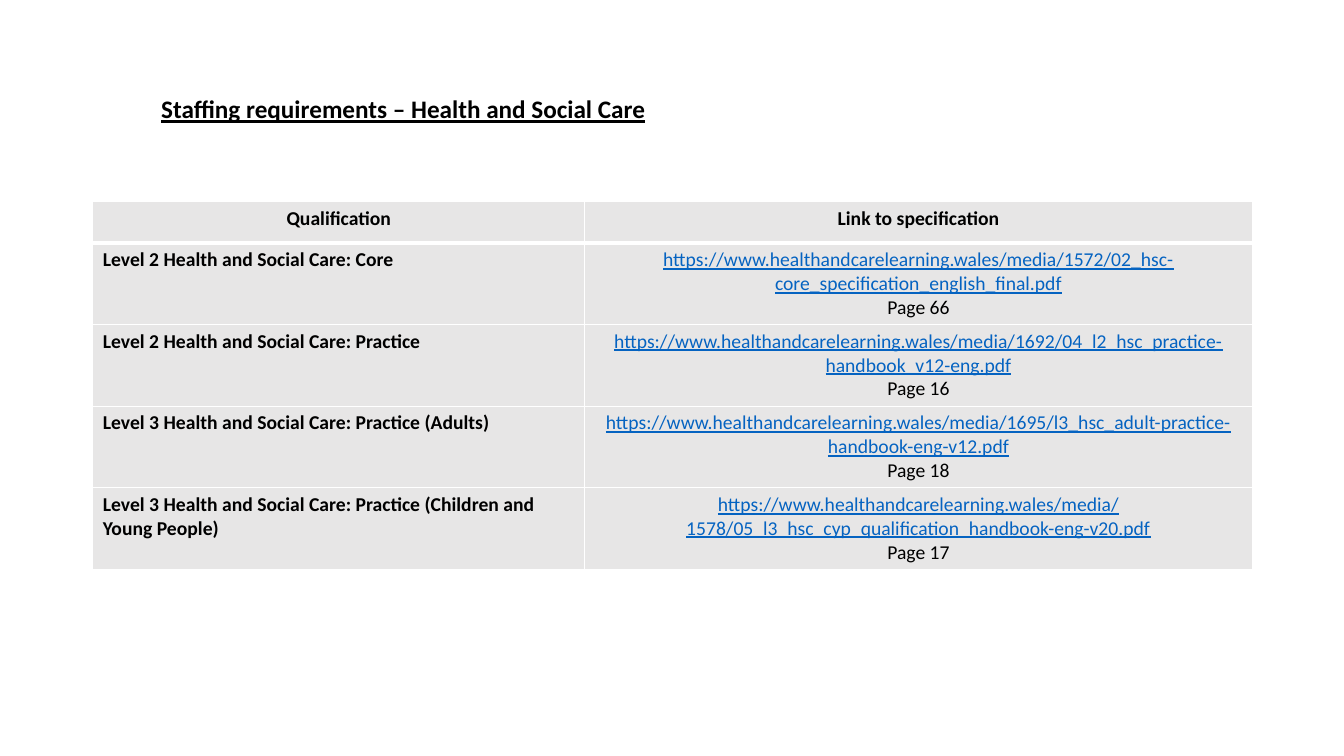
"""Build the slide on staffing requirements for Health and Social Care."""
from lxml import etree
from pptx import Presentation
from pptx.dml.color import RGBColor
from pptx.enum.text import MSO_ANCHOR, PP_ALIGN
from pptx.oxml.ns import qn
from pptx.util import Inches, Pt

LEFT, CENTER = PP_ALIGN.LEFT, PP_ALIGN.CENTER
MIDDLE = MSO_ANCHOR.MIDDLE
BLACK, WHITE, GRAY, BLUE = "000000", "FFFFFF", "E7E6E6", "0563C1"
SITE = "https://www.healthandcarelearning.wales/media/"


def write(para, text, size=14, color=BLACK, bold=False, line=False, align=LEFT):
    para.alignment = align
    run = para.add_run()
    run.text = text
    font = run.font
    font.name, font.size = "Calibri", Pt(size)
    font.bold, font.underline = bold, line
    font.color.rgb = RGBColor.from_string(color)


def edge(cell, side, width):
    props = cell._tc.get_or_add_tcPr()
    line = etree.SubElement(props, qn(f"a:ln{side}"), w=str(Pt(width)))
    fill = etree.SubElement(line, qn("a:solidFill"))
    etree.SubElement(fill, qn("a:srgbClr"), val=WHITE)


prs = Presentation()
prs.slide_width, prs.slide_height = Inches(13.33), Inches(7.5)
slide = prs.slides.add_slide(prs.slide_layouts[6])

title = slide.shapes.add_textbox(Inches(1.5), Inches(0.37), Inches(10.92), Inches(1.45))
frame = title.text_frame
frame.word_wrap = True
frame.vertical_anchor = MIDDLE
frame.paragraphs[0].line_spacing = 0.9
write(frame.paragraphs[0], "Staffing requirements – Health and Social Care",
      size=18, bold=True, line=True)

courses = [
    ("Level 2 Health and Social Care: Core",
     "1572/02_hsc-core_specification_english_final.pdf", 66),
    ("Level 2 Health and Social Care: Practice",
     "1692/04_l2_hsc_practice-handbook_v12-eng.pdf", 16),
    ("Level 3 Health and Social Care: Practice (Adults)",
     "1695/l3_hsc_adult-practice-handbook-eng-v12.pdf", 18),
    ("Level 3 Health and Social Care: Practice (Children and Young People)",
     "1578/05_l3_hsc_cyp_qualification_handbook-eng-v20.pdf", 17),
]

table = slide.shapes.add_table(len(courses) + 1, 2, Inches(0.92), Inches(2),
                               Inches(11.5), Inches(3.61)).table
for col, width in zip(table.columns, (4.88, 6.62)):
    col.width = Inches(width)
for num, row in enumerate(table.rows):
    row.height = Inches(0.81 if num else 0.41)
    for cell in row.cells:
        edge(cell, "L", 1)
        edge(cell, "R", 1)
        edge(cell, "T", 3 if num == 1 else 1)
        edge(cell, "B", 3 if num == 0 else 1)
        cell.fill.solid()
        cell.fill.fore_color.rgb = RGBColor.from_string(GRAY)

for num, head in enumerate(("Qualification", "Link to specification")):
    write(table.cell(0, num).text_frame.paragraphs[0], head, bold=True, align=CENTER)
for num, (name, file, page) in enumerate(courses, 1):
    write(table.cell(num, 0).text_frame.paragraphs[0], name, bold=True)
    frame = table.cell(num, 1).text_frame
    write(frame.paragraphs[0], SITE + file, color=BLUE, line=True, align=CENTER)
    write(frame.add_paragraph(), f"Page {page}", align=CENTER)

prs.save("out.pptx")
